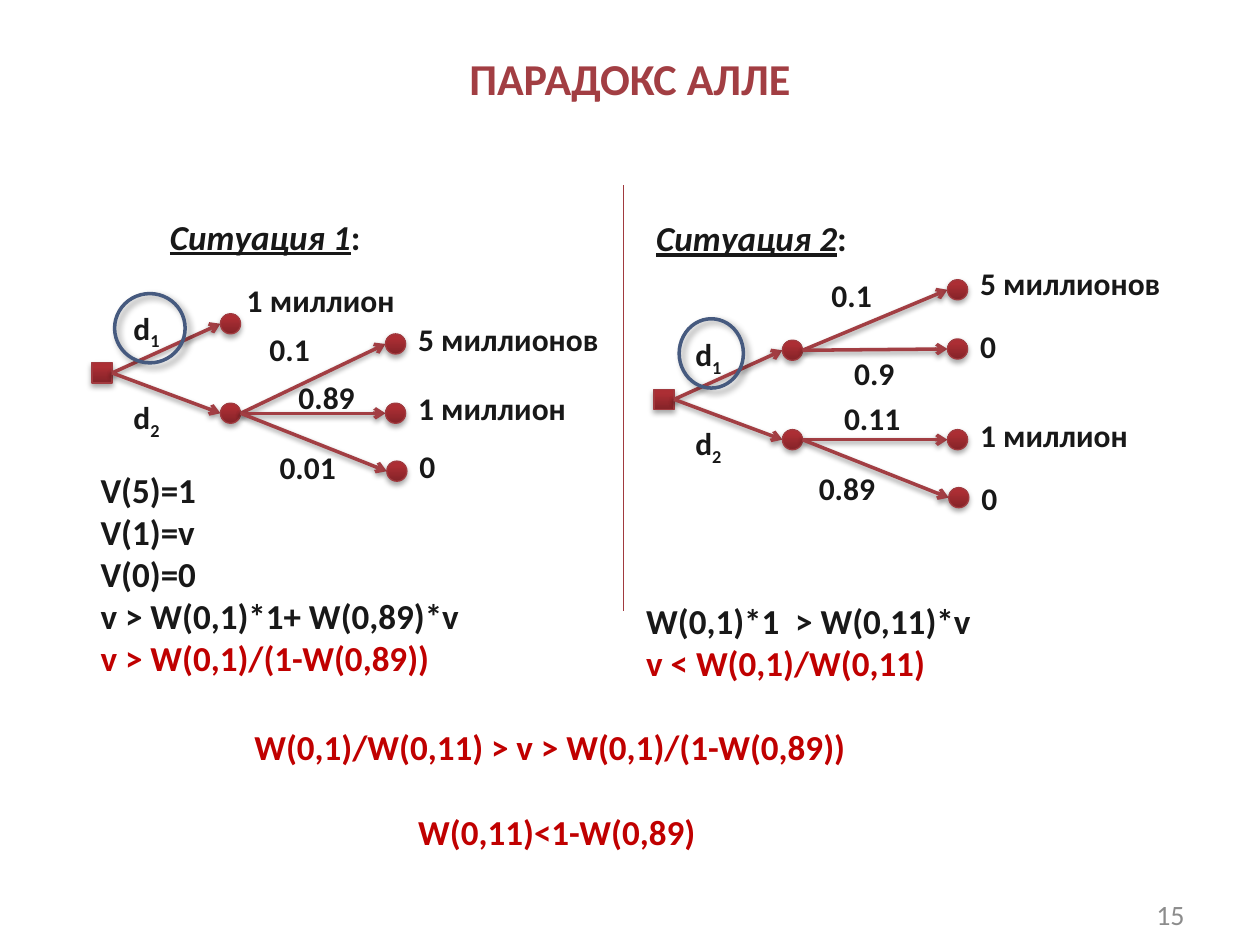
from dataclasses import dataclass
from lxml.etree import SubElement as Sub
from pptx import Presentation
from pptx.dml.color import RGBColor as RGB
from pptx.enum.shapes import MSO_CONNECTOR as Link, MSO_SHAPE as Shape
from pptx.enum.text import MSO_ANCHOR as Anchor, PP_ALIGN as Align
from pptx.oxml.ns import qn
from pptx.util import Pt


@dataclass(frozen=True)
class Theme:
    font: str = "Calibri"
    ink: str = "181818"
    red: str = "C00000"
    head: str = "A23E43"
    edge: str = "A13A3F"
    dark: str = "842328"
    light: str = "AC2E34"
    ring: str = "465A7F"
    gray: str = "8C8C8C"
    top: float = 25.2
    body: int = 20
    label: int = 18
    page: int = 16


T = Theme()
NODE = 16
HALF = NODE // 2


def px(n):
    return n * 9144


def write(frame, lines, size=T.label, color=T.ink, bold=True, align=Align.LEFT,
          anchor=Anchor.TOP):
    frame.word_wrap = True
    frame.vertical_anchor = anchor
    for i, line in enumerate([lines] if isinstance(lines, str) else lines):
        par = frame.add_paragraph() if i else frame.paragraphs[0]
        par.alignment = align
        for part in [line] if isinstance(line, (str, dict)) else line:
            part = {"text": part} if isinstance(part, str) else part
            run = par.add_run()
            run.text = part["text"]
            font = run.font
            font.name, font.size, font.bold = T.font, Pt(size), bold
            font.color.rgb = RGB.from_string(part.get("color", color))
            if part.get("mark"):
                font.italic = font.underline = True
            if part.get("sub"):
                run._r.get_or_add_rPr().set("baseline", "-25000")
    return frame


def label(area, lines, x, y, w, h=40, **form):
    box = area.add_textbox(px(x), px(y), px(w), px(h))
    return write(box.text_frame, lines, **form)


def shade(item, alpha=0, blur=0, dist=0, turn=90):
    props = item._element.spPr
    for old in props.findall(qn("a:effectLst")):
        props.remove(old)
    glow = Sub(props, qn("a:effectLst"))
    if alpha:
        cast = Sub(glow, qn("a:outerShdw"), blurRad=str(Pt(blur)),
                   dist=str(Pt(dist)), dir=str(turn * 60000), rotWithShape="0")
        tint = Sub(cast, qn("a:srgbClr"), val="000000")
        Sub(tint, qn("a:alpha"), val=str(alpha * 1000))


def stroke(item, color, width):
    item.line.color.rgb = RGB.from_string(color)
    item.line.width = Pt(width)


def node(area, x, y, kind=Shape.OVAL):
    dot = area.add_shape(kind, px(x - HALF), px(y - HALF), px(NODE), px(NODE))
    dot.fill.gradient()
    dot.fill.gradient_angle = 90
    for stop, color, place in zip(dot.fill.gradient_stops, (T.dark, T.light), (0, 0.8)):
        stop.color.rgb = RGB.from_string(color)
        stop.position = place
    stroke(dot, T.edge, 0.75)
    shade(dot, 35, 3.1, 1.8)


def arrow(area, x1, y1, x2, y2):
    line = area.add_connector(Link.STRAIGHT, px(x1 + HALF), px(y1), px(x2 - HALF), px(y2))
    stroke(line, T.head, 2)
    Sub(line._element.spPr.find(qn("a:ln")), qn("a:tailEnd"), type="arrow")
    shade(line, 38, 3.1, 1.6)


def ring(area, x, y, w, h):
    loop = area.add_shape(Shape.OVAL, px(x), px(y), px(w), px(h))
    loop.fill.background()
    stroke(loop, T.ring, 2)
    shade(loop, 40, 4, 3, 45)


def tree(slide, x, y, name, place, loop, leaves, sure=None):
    area = slide.shapes.add_group_shape().shapes
    forks = [(x + 102, y - 39), (x + 102, y + 32)]
    label(area, [[{"text": name, "mark": True}, ":"]],
          x + place[0], y + place[1], 189, 44, size=T.body)
    node(area, x, y, Shape.RECTANGLE)
    for i, (fork, top) in enumerate(zip(forks, (-56, 15)), 1):
        arrow(area, x, y, *fork)
        node(area, *fork)
        label(area, [["d", {"text": str(i), "sub": True}]], x + 15, y + top, 58)
    if sure:
        label(area, sure, x + 105, y - 78, 152)
    for fork, dx, dy, gain, rise, odds, left, top in leaves:
        arrow(area, *forks[fork], x + dx, y + dy)
        node(area, x + dx, y + dy)
        label(area, gain, x + dx + HALF, y + dy - rise, 181)
        label(area, odds, x + left, y + top, 71)
    ring(slide.shapes, x + loop[0], y + loop[1], loop[2], loop[3])


def header(slide, x, y, w, h):
    title = slide.shapes.title
    title.left, title.top, title.width, title.height = map(px, (x, y, w, h))
    write(title.text_frame, "ПАРАДОКС АЛЛЕ", size=T.top, color=T.head, align=Align.CENTER)


def rule(slide, x, y, h):
    line = slide.shapes.add_connector(Link.STRAIGHT, px(x), px(y), px(x), px(y + h))
    stroke(line, T.edge, 0.75)
    shade(line)


def proof(slide, x, y, w, h, lines):
    *steps, last = lines
    label(slide.shapes, [*steps, {"text": last, "color": T.red}], x, y, w, h, size=T.body)


def result(slide, x, y, w, h):
    frame = label(slide.shapes, ["W(0,1)/W(0,11) > v > W(0,1)/(1-W(0,89))", "W(0,11)<1-W(0,89)"],
                  x, y, w, h, size=T.body, color=T.red)
    last = frame.paragraphs[-1]
    last.alignment = Align.CENTER
    last.space_before = Pt(24.4)


def main():
    deck = Presentation()
    deck.slide_width, deck.slide_height = px(1000), px(750)
    slide = deck.slides.add_slide(deck.slide_layouts[5])
    header(slide, 50, 36, 900, 52)
    label(slide.shapes, "15", 894, 706, 56, size=T.page, color=T.gray, bold=False,
          align=Align.RIGHT, anchor=Anchor.MIDDLE)
    proof(slide, 70, 367, 346, 178, [
        "V(5)=1", "V(1)=v", "V(0)=0", "v > W(0,1)*1+ W(0,89)*v", "v > W(0,1)/(1-W(0,89))"])
    tree(slide, 81, 296, "Ситуация 1", (44, -130), (10, -63, 56, 55), [
        (1, 233, -23, "5 миллионов", 24, "0.1", 123, -39),
        (1, 233, 32, "1 миллион", 24, "0.89", 146, -1),
        (1, 234, 78, "0", 24, "0.01", 131, 55)], sure="1 миллион")
    tree(slide, 527, 317, "Ситуация 2", (-16, -150), (12, -64, 51, 55), [
        (0, 233, -87, "5 миллионов", 25, "0.1", 123, -103),
        (0, 233, -40, "0", 22, "0.9", 141, -41),
        (1, 233, 32, "1 миллион", 24, "0.11", 133, -5),
        (1, 234, 78, "0", 20, "0.89", 113, 50)])
    rule(slide, 495, 147, 338)
    proof(slide, 503, 471, 425, 77, ["W(0,1)*1  > W(0,11)*v", "v < W(0,1)/W(0,11)"])
    result(slide, 192, 571, 500, 111)
    deck.save("out.pptx")


if __name__ == "__main__":
    main()
